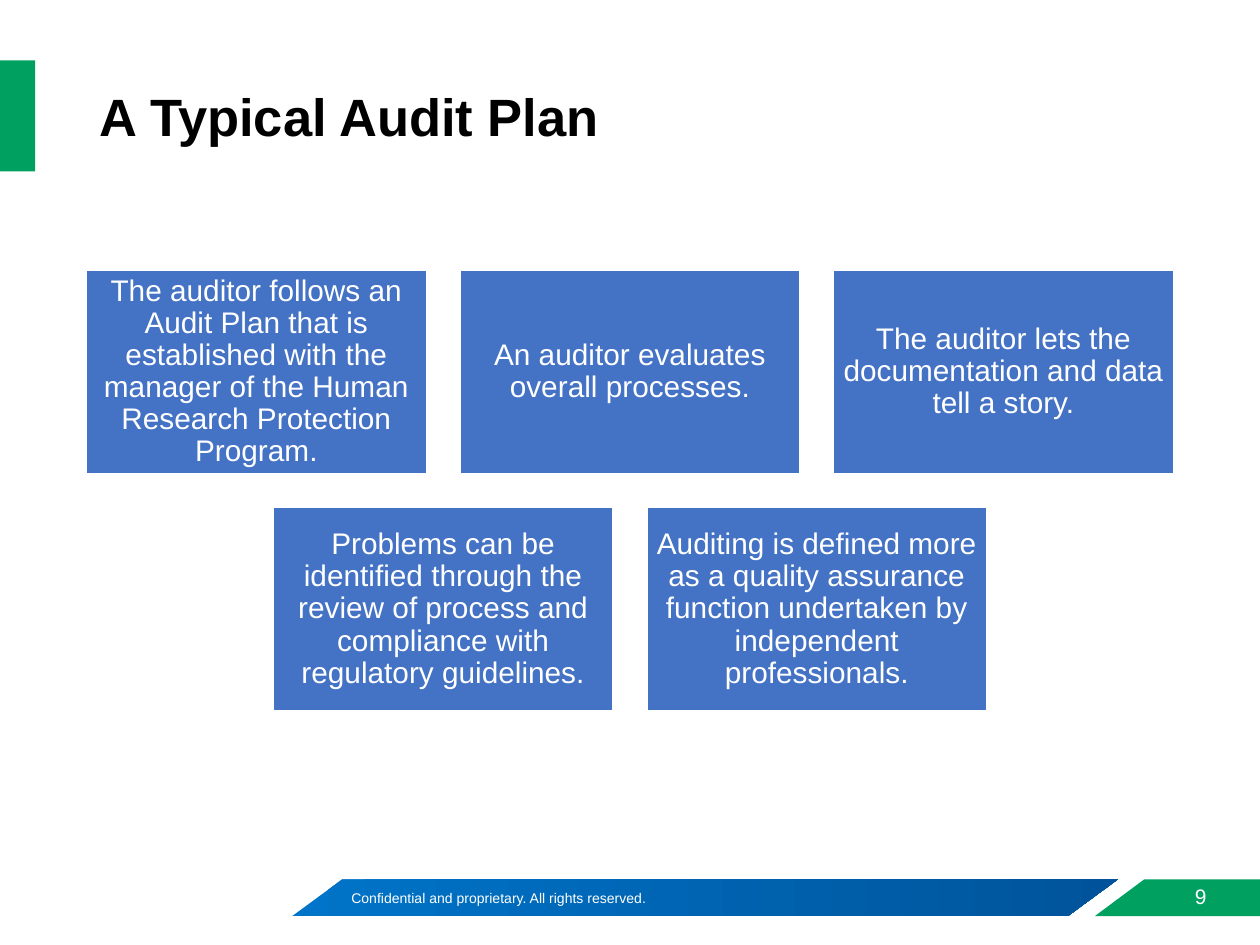
from pptx import Presentation
from pptx.dml.color import RGBColor
from pptx.enum.shapes import MSO_SHAPE as Preset
from pptx.enum.text import MSO_ANCHOR as Anchor, MSO_AUTO_SIZE as AutoSize, PP_ALIGN as Align
from pptx.util import Inches, Pt

WHITE, BLACK, GREEN, BLUE = "FFFFFF", "000000", "00A160", "4472C4"
BAR_START, BAR_END = "0074C8", "00539B"
TITLE_ONLY = 5

# Grid: 100 columns by 75 rows on a 10 x 7.5 inch slide
COLUMNS, ROWS = 100, 75


def color(hex_text):
    return RGBColor.from_string(hex_text)


class SlideBuilder:
    """Holds the deck style and the current slide."""
    font_name = "Arial"

    def __init__(self, presentation):
        self.column = presentation.slide_width / COLUMNS
        self.row = presentation.slide_height / ROWS
        self.slide = presentation.slides.add_slide(presentation.slide_layouts[TITLE_ONLY])

    def area(self, left, top, width, height):
        return (round(left * self.column), round(top * self.row),
                round(width * self.column), round(height * self.row))

    def fill_text(self, shape, text, size, text_color=WHITE, bold=False,
                  align=Align.LEFT, anchor=Anchor.MIDDLE, spacing=1.0, inset=None):
        frame = shape.text_frame
        frame_format = {"word_wrap": True, "auto_size": AutoSize.NONE, "vertical_anchor": anchor}
        if inset is not None:
            for side in ("left", "right", "top", "bottom"):
                frame_format[f"margin_{side}"] = Inches(inset)
        paragraph = frame.paragraphs[0]
        run = paragraph.add_run()
        run.text = text
        formats = (
            (frame, frame_format),
            (paragraph, {"alignment": align, "line_spacing": spacing}),
            (run.font, {"name": self.font_name, "size": Pt(size), "bold": bold}),
        )
        for target, values in formats:
            for name, value in values.items():
                setattr(target, name, value)
        run.font.color.rgb = color(text_color)

    def title(self, text, area, **style):
        shape = self.slide.shapes.title
        for name, value in zip(("left", "top", "width", "height"), self.area(*area)):
            setattr(shape, name, value)
        self.fill_text(shape, text, **style)

    def text(self, text, area, **style):
        self.fill_text(self.slide.shapes.add_textbox(*self.area(*area)), text, **style)

    def paint(self, shape, fill, line=None):
        shape.shadow.inherit = False
        shape.fill.solid()
        shape.fill.fore_color.rgb = color(fill)
        if line:
            shape.line.color.rgb = color(line)
            shape.line.width = Pt(1)
        else:
            shape.line.fill.background()
        return shape

    def box(self, area, fill, line=None):
        shape = self.slide.shapes.add_shape(Preset.RECTANGLE, *self.area(*area))
        return self.paint(shape, fill, line)

    def gradient_bar(self, area, slant, colors):
        shape = self.slide.shapes.add_shape(Preset.PARALLELOGRAM, *self.area(*area))
        shape.adjustments[0] = slant
        shape.shadow.inherit = False
        shape.line.fill.background()
        shape.fill.gradient()
        shape.fill.gradient_angle = 0
        for stop, position, stop_color in zip(shape.fill.gradient_stops, (0, 1), colors):
            stop.position = position
            stop.color.rgb = color(stop_color)

    def polygon(self, points, fill):
        corners = [(round(x * self.column), round(y * self.row)) for x, y in points]
        builder = self.slide.shapes.build_freeform(*corners[0])
        builder.add_line_segments(corners[1:], close=True)
        self.paint(builder.convert_to_shape(), fill)


def main():
    presentation = Presentation()
    presentation.slide_width, presentation.slide_height = Inches(10), Inches(7.5)
    page = SlideBuilder(presentation)

    # Footer band and title accent
    page.gradient_bar((23.2, 69.8, 65.5, 2.9), 1.36, (BAR_START, BAR_END))
    page.polygon([(86.9, 72.7), (90.8, 69.8), (100, 69.8), (100, 72.7)], GREEN)
    page.box((0, 4.8, 2.8, 8.8), GREEN)
    page.text("Confidential and proprietary. All rights reserved.",
              (26.9, 70.1, 38.3, 2.4), size=8, anchor=Anchor.TOP)
    page.text("9", (93, 69.6, 4.6, 3.1), size=12, align=Align.CENTER)

    # Title
    page.title("A Typical Audit Plan", (6.9, 5.1, 86.2, 8.8),
               size=30, text_color=BLACK, bold=True, spacing=0.9)

    # Audit points: each row of boxes is centred on the slide
    box_width, box_height, gap = 27, 16.2, 2.65
    first_top = 21.4
    point_rows = [
        ["The auditor follows an Audit Plan that is established with the manager "
         "of the Human Research Protection Program.",
         "An auditor evaluates overall processes.",
         "The auditor lets the documentation and data tell a story."],
        ["Problems can be identified through the review of process and compliance "
         "with regulatory guidelines.",
         "Auditing is defined more as a quality assurance function undertaken by "
         "independent professionals."],
    ]
    for row_index, points in enumerate(point_rows):
        row_width = len(points) * (box_width + gap) - gap
        top = first_top + row_index * (box_height + gap)
        for index, point in enumerate(points):
            left = (COLUMNS - row_width) / 2 + index * (box_width + gap)
            box = page.box((left, top, box_width, box_height), BLUE, WHITE)
            page.fill_text(box, point, size=17, align=Align.CENTER, spacing=0.9, inset=0.07)

    presentation.save("out.pptx")


if __name__ == "__main__":
    main()
